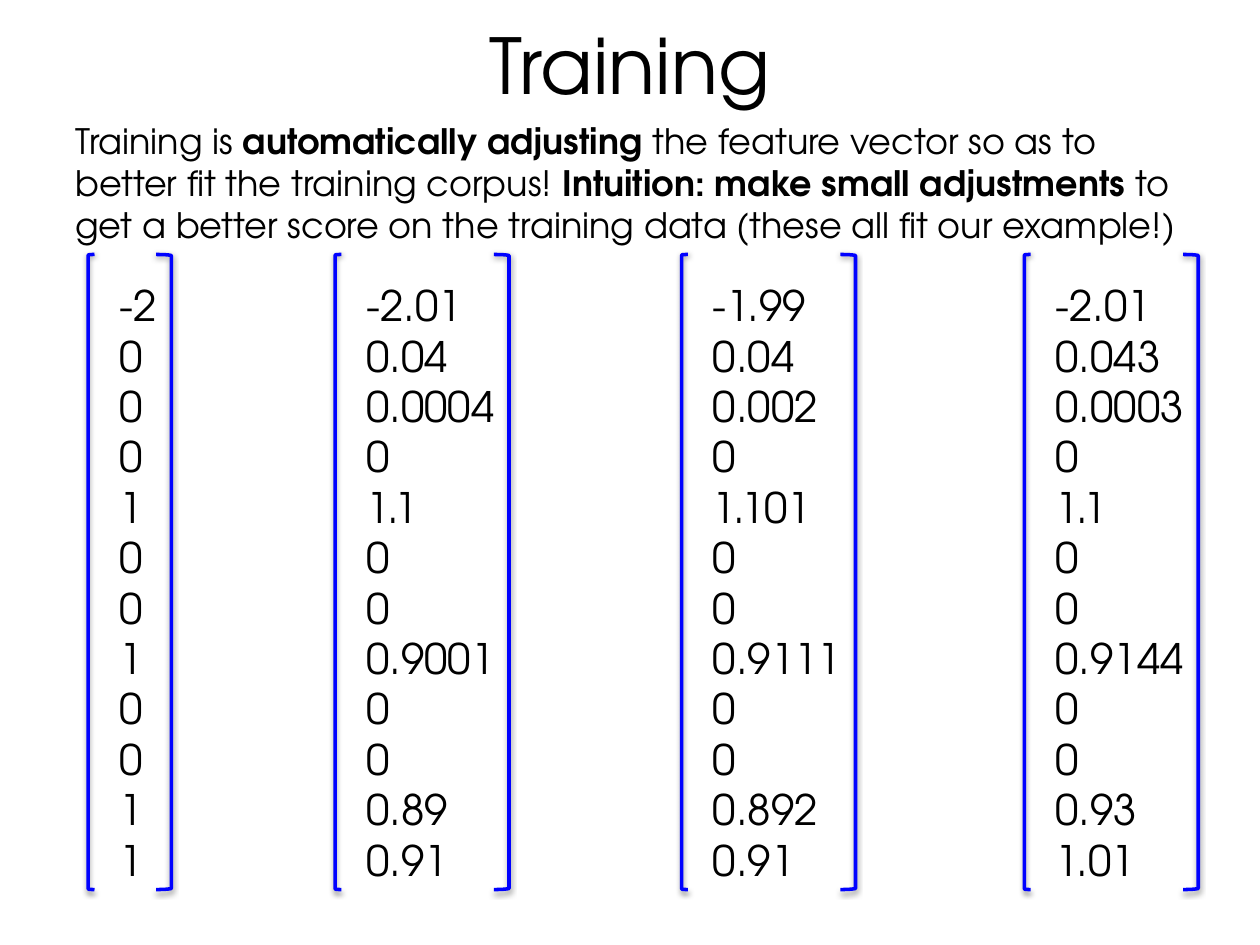
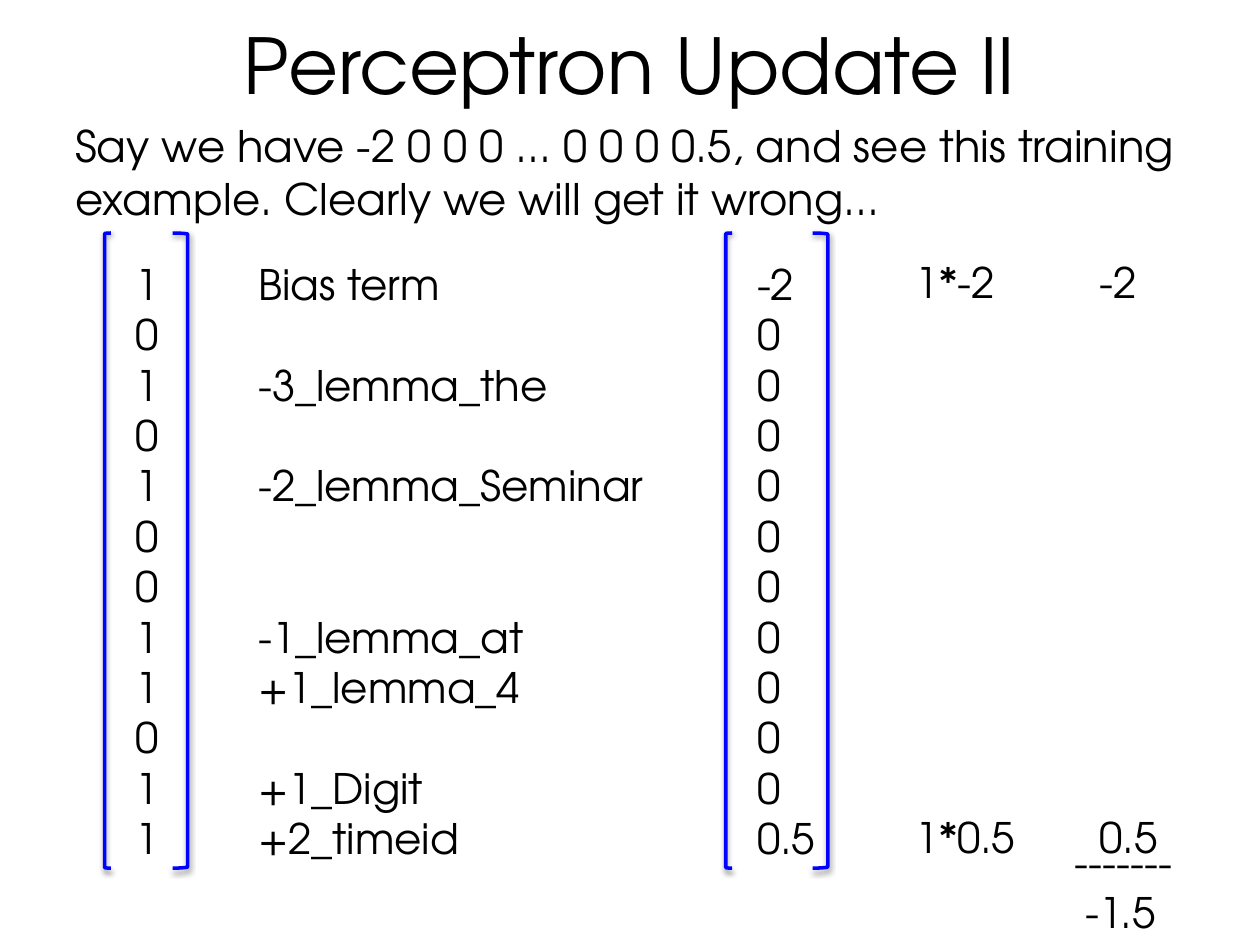
from dataclasses import dataclass

from lxml import etree
from pptx import Presentation
from pptx.dml.color import RGBColor as RGB
from pptx.enum.shapes import MSO_SHAPE as SHAPE
from pptx.enum.text import MSO_ANCHOR as ANCHOR, MSO_AUTO_SIZE as AUTO, PP_ALIGN as ALIGN
from pptx.oxml import parse_xml
from pptx.oxml.ns import nsdecls
from pptx.util import Emu, Pt

PX = 9144  # 100 px to the inch


def px(n):
    return Emu(n * PX)


@dataclass(frozen=True)
class Theme:
    font: str = "TeX Gyre Adventor"
    ink: RGB = RGB(0x00, 0x00, 0x00)
    bracket: RGB = RGB(0x00, 0x01, 0xFF)
    title: float = 44
    lead: float = 24.8
    lead_small: float = 20
    value: float = 24
    row: float = 28.8
    bracket_line: float = 2


SHADOW = (f'<a:outerShdw {nsdecls("a")} blurRad="40000" dist="20000" dir="5400000" '
          'rotWithShape="0"><a:srgbClr val="000000"><a:alpha val="38000"/>'
          '</a:srgbClr></a:outerShdw>')


def write(p, text, *, theme, size, align=ALIGN.LEFT, before=0, indent=0):
    """Fill a paragraph; text between ** marks is bold."""
    p.alignment = align
    p.space_before = Pt(before)
    if indent:
        p._p.get_or_add_pPr().set("marL", str(px(indent)))
    for i, part in enumerate(text.split("**")):
        r = p.add_run()
        r.text = part
        r.font.name, r.font.size = theme.font, Pt(size)
        r.font.bold = i % 2 == 1
        r.font.color.rgb = theme.ink


class Deck:
    BRACKET_HEIGHT = 504

    def __init__(self, theme):
        self.theme = theme
        self.prs = Presentation()
        self.prs.slide_width, self.prs.slide_height = px(1000), px(750)
        self.s = None

    def slide(self, title, lead, lead_size):
        self.s = self.prs.slides.add_slide(self.prs.slide_layouts[5])
        sp = self.s.shapes.title
        sp.left, sp.top, sp.width, sp.height = map(px, (50, 0, 900, 101))
        tf = sp.text_frame
        tf.auto_size, tf.vertical_anchor = AUTO.NONE, ANCHOR.MIDDLE
        write(tf.paragraphs[0], title, theme=self.theme, size=self.theme.title,
              align=ALIGN.CENTER)
        write(self.frame(50, 90, 900, 96).paragraphs[0], lead, theme=self.theme,
              size=lead_size)

    def frame(self, x, y, w, h):
        tf = self.s.shapes.add_textbox(*map(px, (x, y, w, h))).text_frame
        tf.word_wrap = True
        tf.margin_right = 0
        return tf

    def column(self, x, y, w, rows):
        """Stack rows of text; an empty row becomes space before the next one."""
        tf = self.frame(x, y, w, 495)
        skipped, p = 0, None
        for text in rows:
            if not text:
                skipped += 1
                continue
            p = tf.add_paragraph() if p else tf.paragraphs[0]
            write(p, text, theme=self.theme, size=self.theme.value,
                  before=skipped * self.theme.row)
            skipped = 0

    def bracket(self, x, y, w, flip=False):
        sp = self.s.shapes.add_shape(SHAPE.LEFT_BRACKET,
                                     *map(px, (x, y, w, self.BRACKET_HEIGHT)))
        sp.fill.background()
        sp.line.color.rgb = self.theme.bracket
        sp.line.width = Pt(self.theme.bracket_line)
        sp.shadow.inherit = False
        sp._element.spPr.find("{*}effectLst").append(parse_xml(SHADOW))
        if flip:
            sp._element.spPr.xfrm.set("flipH", "1")

    def vector(self, x, y, w, values):
        """Values between two brackets whose outer edges are w apart."""
        self.bracket(x, y, 5)
        self.bracket(x + w - 12, y, 12, flip=True)
        self.column(x + 15, y + 15, w - 16, values.split())

    def total(self, x, y, text):
        tf = self.frame(x, y, 101, 91)
        write(tf.paragraphs[0], "-------", theme=self.theme, size=self.theme.value)
        write(tf.add_paragraph(), text, theme=self.theme, size=self.theme.value, indent=9)


def training(deck):
    deck.slide("Training",
               "Training is **automatically adjusting** the feature vector so as to better "
               "fit the training corpus! **Intuition: make small adjustments** to get a "
               "better score on the training data (these all fit our example!)",
               deck.theme.lead_small)
    for x, w, weights in (
            (70, 66, "-2 0 0 0 1 0 0 1 0 0 1 1"),
            (266, 138, "-2.01 0.04 0.0004 0 1.1 0 0 0.9001 0 0 0.89 0.91"),
            (541, 138, "-1.99 0.04 0.002 0 1.101 0 0 0.9111 0 0 0.892 0.91"),
            (813, 138, "-2.01 0.043 0.0003 0 1.1 0 0 0.9144 0 0 0.93 1.01")):
        deck.vector(x, 202, w, weights)


def perceptron_update(deck):
    top = 185
    deck.slide("Perceptron Update II",
               "Say we have -2 0 0 0 ... 0 0 0 0.5, and see this training example. "
               "Clearly we will get it wrong...", deck.theme.lead)
    deck.vector(83, top, 66, "1 0 1 0 1 0 0 1 1 0 1 1")
    deck.column(195, top + 15, 336, [
        "Bias term", "", "-3_lemma_the", "", "-2_lemma_Seminar", "", "",
        "-1_lemma_at", "+1_lemma_4", "", "+1_Digit", "+2_timeid"])
    deck.vector(576, top, 81, "-2 " + "0 " * 10 + "0.5")
    for x, w, first, last in ((717, 100, "1*-2", "1*0.5"), (863, 80, "-2", "0.5")):
        deck.column(x, top + 14, w, [first, *[""] * 10, last])
    deck.total(843, 659, "-1.5")


def main():
    deck = Deck(Theme())
    training(deck)
    perceptron_update(deck)
    deck.prs.save("out.pptx")


if __name__ == "__main__":
    main()
